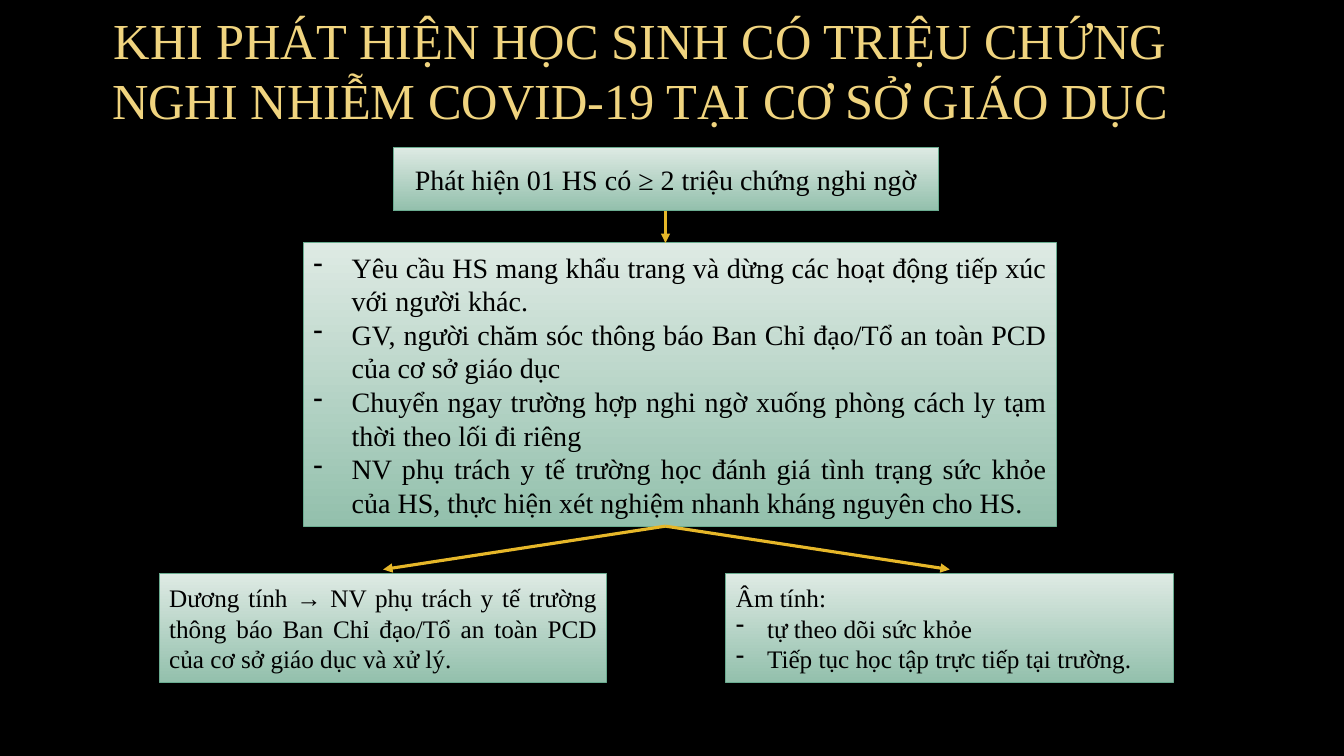
from pptx import Presentation
from pptx.dml.color import RGBColor
from pptx.enum.shapes import MSO_CONNECTOR as Connector, MSO_SHAPE as Shape
from pptx.enum.text import MSO_ANCHOR as Anchor, PP_ALIGN as Align
from pptx.oxml.ns import qn
from pptx.util import Inches, Pt
from lxml.etree import SubElement

BLACK = RGBColor(0x00, 0x00, 0x00)
TITLE_GOLD = RGBColor(0xF0, 0xD4, 0x7F)
ARROW_GOLD = RGBColor(0xE6, 0xB7, 0x29)
PALE_GREEN = RGBColor(0xDE, 0xEA, 0xE4)
SOFT_GREEN = RGBColor(0x93, 0xC0, 0xAC)
EDGE_GREEN = RGBColor(0x6A, 0xAC, 0x90)
FONT = "Times New Roman"

TITLE = "KHI PHÁT HIỆN HỌC SINH CÓ TRIỆU CHỨNG NGHI NHIỄM COVID-19 TẠI CƠ SỞ GIÁO DỤC"
DETECTION = ["Phát hiện 01 HS có ≥ 2 triệu chứng nghi ngờ"]
ACTIONS = [
    "- Yêu cầu HS mang khẩu trang và dừng các hoạt động tiếp xúc với người khác.",
    "- GV, người chăm sóc thông báo Ban Chỉ đạo/Tổ an toàn PCD của cơ sở giáo dục",
    "- Chuyển ngay trường hợp nghi ngờ xuống phòng cách ly tạm thời theo lối đi riêng",
    "- NV phụ trách y tế trường học đánh giá tình trạng sức khỏe của HS, "
    "thực hiện xét nghiệm nhanh kháng nguyên cho HS.",
]
POSITIVE = ["Dương tính → NV phụ trách y tế trường thông báo Ban Chỉ đạo/Tổ an toàn PCD "
            "của cơ sở giáo dục và xử lý."]
NEGATIVE = ["Âm tính:", "- tự theo dõi sức khỏe", "- Tiếp tục học tập trực tiếp tại trường."]


def write_lines(frame, lines, size, color, align, indent=0):
    """Fill a text frame; lines that start with "- " become dash bullets."""
    frame.word_wrap = True
    font_format = {"name": FONT, "size": Pt(size)}
    for number, line in enumerate(lines):
        paragraph = frame.paragraphs[0] if number == 0 else frame.add_paragraph()
        paragraph.alignment = align
        if line.startswith("- "):
            properties = paragraph._p.get_or_add_pPr()
            properties.set("marL", str(Inches(indent)))
            properties.set("indent", str(-Inches(indent)))
            SubElement(properties, qn("a:buFontTx"))
            SubElement(properties, qn("a:buChar"), char="-")
        run = paragraph.add_run()
        run.text = line.removeprefix("- ")
        for key, value in font_format.items():
            setattr(run.font, key, value)
        run.font.color.rgb = color


def add_title(slide, box):
    heading = slide.shapes.add_textbox(*map(Inches, box))
    write_lines(heading.text_frame, [TITLE], 36, TITLE_GOLD, Align.CENTER)


def add_step(slide, box, lines, size, align=Align.JUSTIFY, indent=0):
    step = slide.shapes.add_shape(Shape.RECTANGLE, *map(Inches, box))
    step.shadow.inherit = False
    step.fill.gradient()
    step.fill.gradient_angle = 270
    for stop, color in zip(step.fill.gradient_stops, (PALE_GREEN, SOFT_GREEN)):
        stop.color.rgb = color
    step.line.color.rgb = EDGE_GREEN
    step.line.width = Pt(0.75)
    step.text_frame.vertical_anchor = Anchor.MIDDLE
    write_lines(step.text_frame, lines, size, BLACK, align, indent)


def add_arrow(slide, start, end):
    arrow = slide.shapes.add_connector(Connector.STRAIGHT, *map(Inches, start + end))
    arrow.line.color.rgb = ARROW_GOLD
    arrow.line.width = Pt(2.25)
    SubElement(arrow.line._get_or_add_ln(), qn("a:tailEnd"), type="triangle")
    SubElement(arrow._element.spPr, qn("a:effectLst"))


def add_flow(slide, box):
    """Detection, then actions, then the two test results."""
    left, top, width, height = box
    axis = left + 5.02
    actions_top, actions_height = top + 0.95, 2.81
    fork = actions_top + actions_height
    result_width, result_height = 4.44, 1.08
    results_top = top + height - result_height
    negative_left = left + width - result_width

    add_step(slide, (left + 2.32, top, 5.41, 0.63), DETECTION, 20, Align.CENTER)
    add_step(slide, (left + 1.43, actions_top, 7.47, actions_height), ACTIONS, 20, indent=0.38)
    add_step(slide, (left, results_top, result_width, result_height), POSITIVE, 18)
    add_step(slide, (negative_left, results_top, result_width, result_height),
             NEGATIVE, 18, indent=0.31)

    add_arrow(slide, (axis, top + 0.63), (axis, actions_top))
    for result_left in (left, negative_left):
        add_arrow(slide, (axis, fork), (result_left + result_width / 2, results_top - 0.04))


def main():
    deck = Presentation()
    deck.slide_width, deck.slide_height = Inches(13.33), Inches(7.5)
    slide = deck.slides.add_slide(deck.slide_layouts[6])
    slide.background.fill.solid()
    slide.background.fill.fore_color.rgb = BLACK
    add_title(slide, (0.87, 0.04, 10.96, 1.45))
    add_flow(slide, (1.58, 1.46, 10.06, 5.31))
    deck.save("out.pptx")


if __name__ == "__main__":
    main()
